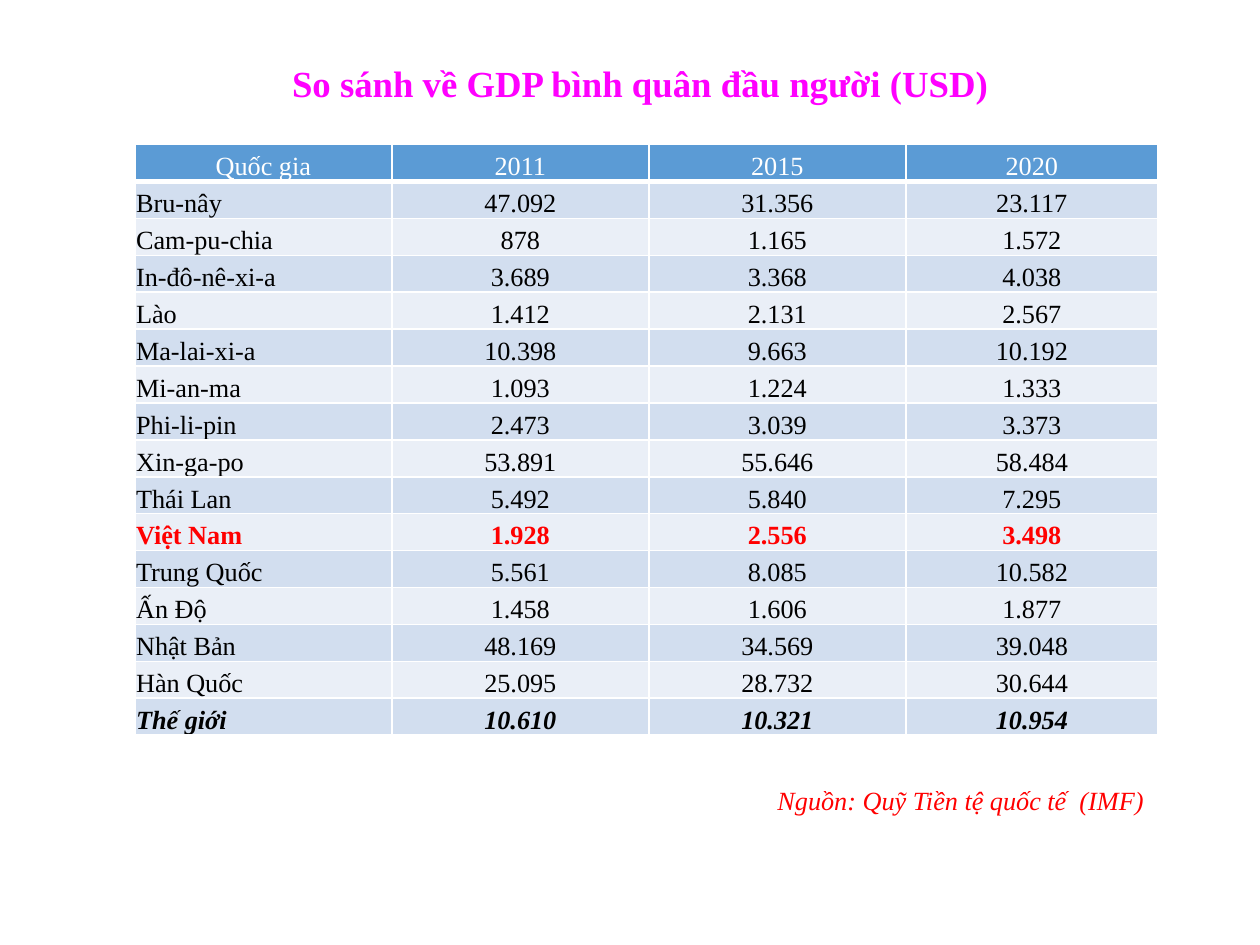
"""Build a slide that compares GDP per head across countries."""
from dataclasses import dataclass

from lxml import etree
from pptx import Presentation
from pptx import util as u
from pptx.dml.color import RGBColor
from pptx.enum import text
from pptx.oxml import ns

WIDE, HIGH = 10, 7.5
COLS = (2.04, 2.04, 2.04, 2)


@dataclass(frozen=True)
class Theme:
    font: str = "Times New Roman"
    white: str = "FFFFFF"
    black: str = "000000"
    red: str = "FF0000"
    pink: str = "FF00FF"
    head: str = "5B9BD5"
    bands: tuple[str, str] = ("EAEFF7", "D2DEEF")
    big: int = 21
    body: int = 15
    thin: int = 1
    thick: int = 3


@dataclass(frozen=True)
class Style:
    color: str
    size: int = 15
    bold: bool = False
    slant: bool = False


@dataclass(frozen=True)
class Row:
    land: str
    nums: tuple[str, str, str]
    style: Style


@dataclass(frozen=True)
class Area:
    left: float
    top: float
    width: float
    height: float

    def place(self) -> tuple[int, ...]:
        sides = (WIDE, HIGH, WIDE, HIGH)
        shares = (self.left, self.top, self.width, self.height)
        return tuple(u.Inches(side * share) for side, share in zip(sides, shares))


THEME = Theme()
PLAIN = Style(THEME.black)
ROWS = (
    Row("Quốc gia", ("2011", "2015", "2020"), Style(THEME.white)),
    Row("Bru-nây", ("47.092", "31.356", "23.117"), PLAIN),
    Row("Cam-pu-chia", ("878", "1.165", "1.572"), PLAIN),
    Row("In-đô-nê-xi-a", ("3.689", "3.368", "4.038"), PLAIN),
    Row("Lào", ("1.412", "2.131", "2.567"), PLAIN),
    Row("Ma-lai-xi-a", ("10.398", "9.663", "10.192"), PLAIN),
    Row("Mi-an-ma", ("1.093", "1.224", "1.333"), PLAIN),
    Row("Phi-li-pin", ("2.473", "3.039", "3.373"), PLAIN),
    Row("Xin-ga-po", ("53.891", "55.646", "58.484"), PLAIN),
    Row("Thái Lan", ("5.492", "5.840", "7.295"), PLAIN),
    Row("Việt Nam", ("1.928", "2.556", "3.498"), Style(THEME.red, bold=True)),
    Row("Trung Quốc", ("5.561", "8.085", "10.582"), PLAIN),
    Row("Ấn Độ", ("1.458", "1.606", "1.877"), PLAIN),
    Row("Nhật Bản", ("48.169", "34.569", "39.048"), PLAIN),
    Row("Hàn Quốc", ("25.095", "28.732", "30.644"), PLAIN),
    Row("Thế giới", ("10.610", "10.321", "10.954"),
        Style(THEME.black, bold=True, slant=True)),
)


def write(frame, words: str, style: Style, align: text.PP_ALIGN):
    frame.text = words
    para = frame.paragraphs[0]
    para.alignment = align
    for run in para.runs:
        font = run.font
        font.name, font.size = THEME.font, u.Pt(style.size)
        font.bold, font.italic = style.bold, style.slant
        font.color.rgb = RGBColor.from_string(style.color)
    return para


def paint(item, color: str) -> None:
    item.fill.solid()
    item.fill.fore_color.rgb = RGBColor.from_string(color)


def edge(cell, base: int) -> None:
    props = cell._tc.get_or_add_tcPr()
    for side in "LRTB":
        width = base if side == "B" else THEME.thin
        line = etree.SubElement(props, ns.qn(f"a:ln{side}"), w=str(u.Pt(width)))
        fill = etree.SubElement(line, ns.qn("a:solidFill"))
        etree.SubElement(fill, ns.qn("a:srgbClr"), val=THEME.white)


def draw_cell(cell, words: str, style: Style, fill: str, mid: bool, base: int) -> None:
    cell.margin_left = cell.margin_right = cell.margin_top = u.Inches(0.01)
    cell.margin_bottom = 0
    cell.vertical_anchor = text.MSO_ANCHOR.BOTTOM
    align = text.PP_ALIGN.CENTER if mid else text.PP_ALIGN.LEFT
    write(cell.text_frame, words, style, align)
    edge(cell, base)
    paint(cell, fill)


def draw_table(slide, rows: tuple[Row, ...], area: Area) -> None:
    table = slide.shapes.add_table(len(rows), len(COLS), *area.place()).table
    for col, width in zip(table.columns, COLS):
        col.width = u.Inches(width)
    for r, row in enumerate(rows):
        fill = THEME.bands[r % 2] if r else THEME.head
        base = THEME.thin if r else THEME.thick
        for c, words in enumerate((row.land, *row.nums)):
            draw_cell(table.cell(r, c), words, row.style, fill, r == 0 or c > 0, base)


def draw_title(slide, words: str, area: Area) -> None:
    box = slide.shapes.add_textbox(*area.place())
    paint(box, THEME.white)
    frame = box.text_frame
    frame.word_wrap = True
    frame.vertical_anchor = text.MSO_ANCHOR.MIDDLE
    style = Style(THEME.pink, THEME.big, bold=True)
    write(frame, words, style, text.PP_ALIGN.CENTER).line_spacing = 1.5


def draw_note(slide, words: str, area: Area) -> None:
    frame = slide.shapes.add_textbox(*area.place()).text_frame
    frame.word_wrap = False
    frame.auto_size = text.MSO_AUTO_SIZE.SHAPE_TO_FIT_TEXT
    frame.margin_left = frame.margin_right = u.Inches(0.07)
    frame.margin_top = frame.margin_bottom = u.Inches(0.04)
    style = Style(THEME.red, THEME.body, slant=True)
    write(frame, words, style, text.PP_ALIGN.LEFT)


def main() -> None:
    deck = Presentation()
    deck.slide_width, deck.slide_height = u.Inches(WIDE), u.Inches(HIGH)
    slide = deck.slides.add_slide(deck.slide_layouts[6])
    draw_title(slide, "So sánh về GDP bình quân đầu người (USD)",
               Area(0.073, 0, 0.87, 0.152))
    draw_table(slide, ROWS, Area(0.107, 0.153, 0.811, 0.625))
    draw_note(slide, "Nguồn: Quỹ Tiền tệ quốc tế  (IMF)",
              Area(0.61, 0.825, 0.309, 0.044))
    deck.save("out.pptx")


if __name__ == "__main__":
    main()
